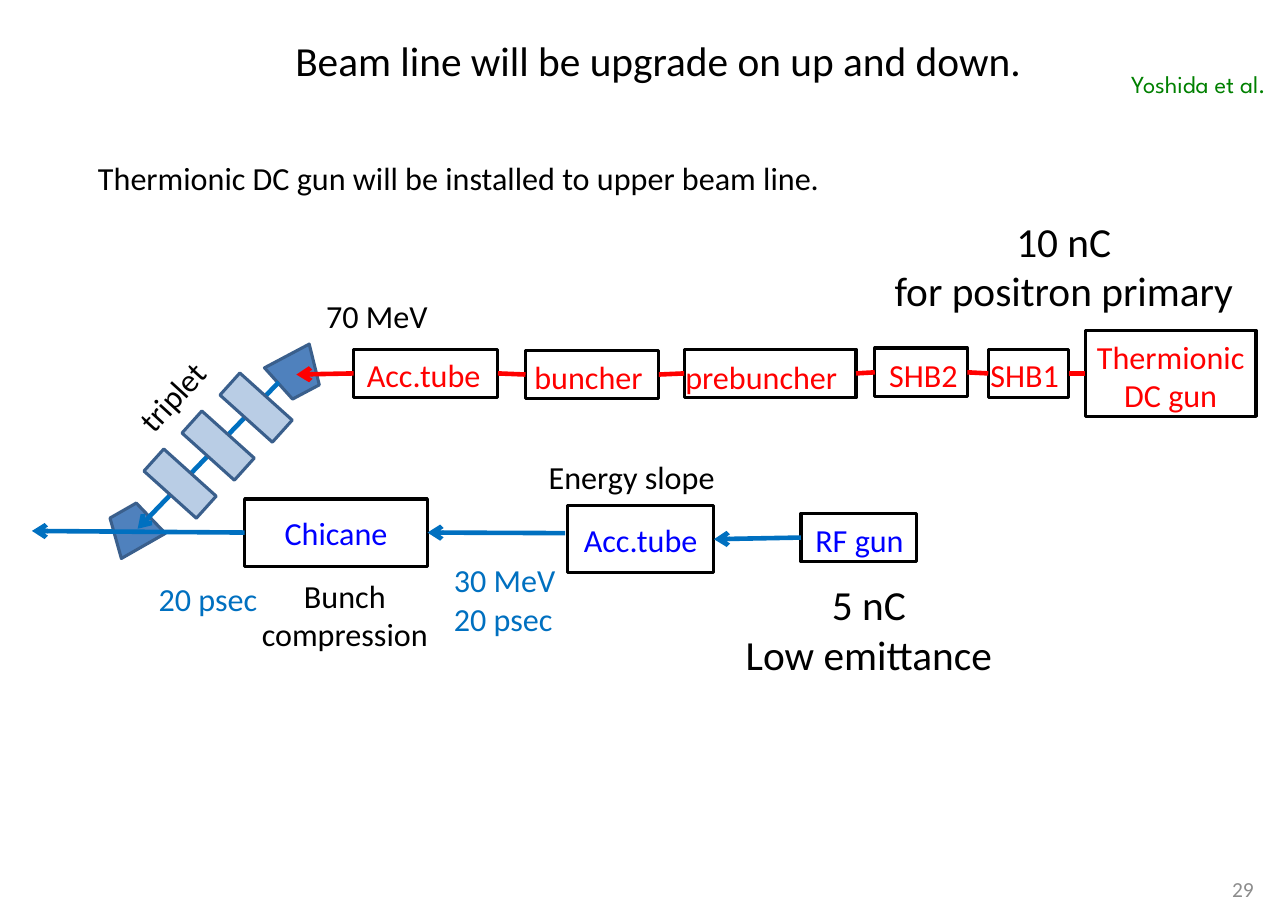
import pptx
import pptx.util
import pptx.dml.color
import pptx.enum.shapes
import pptx.enum.text
import pptx.oxml
import pptx.oxml.ns

Inches = pptx.util.Inches
Pt = pptx.util.Pt
SHAPE = pptx.enum.shapes.MSO_SHAPE
ALIGN = pptx.enum.text.PP_ALIGN
MIDDLE = pptx.enum.text.MSO_ANCHOR.MIDDLE
FIT = pptx.enum.text.MSO_AUTO_SIZE
LEFT, RIGHT = 1, 3

THEME = {
    "black": "000000", "white": "FFFFFF", "red": "FF0000", "blue": "0000FF",
    "beam": "0070C0", "green": "008000", "gray": "8C8C8C",
    "bend": "4F81BD", "magnet": "B9CDE5", "edge": "3A5F8C",
    "font": "Calibri", "credit": "League Spartan",
    "big": 27, "body": 21, "small": 16, "page": 14,
    "frame": 2, "link": 3,
}

FRAMES = {
    "acc": (3.21, 3.17, 1.31, 0.44),
    "bunch": (4.77, 3.18, 1.21, 0.44),
    "pre": (6.21, 3.17, 1.56, 0.44),
    "shb2": (7.94, 3.16, 0.84, 0.44),
    "shb1": (8.97, 3.17, 0.73, 0.44),
    "gun": (9.85, 3, 1.55, 0.78),
    "chicane": (2.22, 4.53, 1.66, 0.61),
    "tube": (5.15, 4.59, 1.33, 0.61),
    "rf": (7.27, 4.66, 1.05, 0.44),
}
FILLED = {"chicane": "Chicane", "tube": "Acc.tube"}
UPPER = ["gun", "shb1", "shb2", "pre", "bunch", "acc"]

ARROWS = [
    ("acc", (2.69, 3.4), "red"),
    ("rf", "tube", "beam"),
    ((5.13, 4.84), "chicane", "beam"),
    ("chicane", (0.29, 4.82), "beam"),
    ((2.53, 3.47), (1.25, 4.8), "beam"),
]
BENDS = [(2.46, 3.21, 152.1), (0.98, 4.61, 330.3)]
TRIPLET = [(2.19 - 0.345 * i, 3.38 + 0.345 * i) for i in range(3)]

LABELS = [
    ("Thermionic DC gun", (9.75, 3, 1.75, 0.82), "red", "body", "CENTER"),
    ("SHB1", (8.88, 3.17, 1.01, 0.47), "red", "body", "LEFT"),
    ("SHB2", (7.96, 3.17, 1.01, 0.47), "red", "body", "LEFT"),
    ("prebuncher", (6.11, 3.18, 1.89, 0.47), "red", "body", "LEFT"),
    ("buncher", (4.74, 3.18, 1.43, 0.47), "red", "body", "LEFT"),
    ("Acc.tube", (3.22, 3.17, 1.47, 0.47), "red", "body", "LEFT"),
    ("RF gun", (7.29, 4.66, 1.29, 0.47), "blue", "body", "LEFT"),
    ("Energy slope", (4.87, 4.09, 1.8, 0.47), "black", "body", "LEFT"),
    ("30 MeV\n20 psec", (4.01, 5.03, 1.29, 0.82), "beam", "body", "LEFT"),
    ("Bunch compression", (2.21, 5.17, 1.84, 0.82), "black", "body", "CENTER"),
    ("5 nC\nLow emittance", (6.54, 5.2, 2.69, 1.02), "black", "big", "CENTER"),
    ("10 nC\nfor positron primary", (7.81, 1.9, 3.69, 1.02), "black", "big", "CENTER"),
    ("Thermionic DC gun will be installed to upper beam line.",
     (0.78, 1.38, 10.4, 0.47), "black", "body", "LEFT"),
    ("70 MeV", (2.85, 2.63, 1.36, 0.47), "black", "body", "LEFT"),
]
LOOSE = [
    ("20 psec", (1.33, 5.2, 1.14, 0.47), "beam", "body", "LEFT"),
    ("Beam line will be upgrade on up and down.",
     (2.57, 0.26, 6.89, 0.57), "black", "big", "LEFT"),
]
TILTED = ("triplet", (1.03, 3.24, 1.28, 0.47), "black", "body", "LEFT")
CREDIT = ("Yoshida et al.", (9.96, 0.57, 1.64, 0.37), "green", "small", "RIGHT")
PAGE = ("29", (10.81, 7.93, 0.68, 0.28), "gray", "page", "RIGHT")

deck = pptx.Presentation()
deck.slide_width, deck.slide_height = Inches(11.69), Inches(8.27)
slide = deck.slides.add_slide(deck.slide_layouts[6])


def tint(name):
    return pptx.dml.color.RGBColor.from_string(THEME[name])


def write(shape, text, color, size, align, font="font"):
    frame = shape.text_frame
    frame.margin_left = frame.margin_right = Inches(0.11)
    frame.margin_top = frame.margin_bottom = Inches(0.06)
    frame.text = text
    for line in frame.paragraphs:
        line.alignment = ALIGN[align]
        line.font.name = THEME[font]
        line.font.size = Pt(THEME[size])
        line.font.color.rgb = tint(color)
    return frame


def label(text, place, color, size, align, wrap=True, fit=True, font="font"):
    box = slide.shapes.add_textbox(*map(Inches, place))
    frame = write(box, text, color, size, align, font)
    frame.word_wrap = wrap
    frame.auto_size = FIT.SHAPE_TO_FIT_TEXT if fit else FIT.NONE
    return box


def block(kind, place, fill, edge, turn=0):
    shape = slide.shapes.add_shape(kind, *map(Inches, place))
    shape.shadow.inherit = False
    shape.rotation = turn
    if fill:
        shape.fill.solid()
        shape.fill.fore_color.rgb = tint(fill)
    else:
        shape.fill.background()
    shape.line.color.rgb = tint(edge)
    shape.line.width = Pt(THEME["frame"])
    return shape


def point(end):
    return (0, 0) if end in boxes else tuple(map(Inches, end))


def link(start, stop, color, arrow=False):
    line = slide.shapes.add_connector(
        pptx.enum.shapes.MSO_CONNECTOR.STRAIGHT, *point(start), *point(stop))
    if start in boxes:
        line.begin_connect(boxes[start], LEFT)
    if stop in boxes:
        line.end_connect(boxes[stop], RIGHT)
    line.line.color.rgb = tint(color)
    line.line.width = Pt(THEME["link"])
    if arrow:
        tail = pptx.oxml.parse_xml(
            f'<a:tailEnd {pptx.oxml.ns.nsdecls("a")} type="arrow"/>')
        line.line._get_or_add_ln().append(tail)
    line._element.spPr.append(
        pptx.oxml.parse_xml(f'<a:effectLst {pptx.oxml.ns.nsdecls("a")}/>'))


for left, top, turn in BENDS:
    block(SHAPE.TRAPEZOID, (left, top, 0.46, 0.37), "bend", "edge", turn)

boxes = {}
for name, place in FRAMES.items():
    fill = "white" if name in FILLED else None
    boxes[name] = block(SHAPE.RECTANGLE, place, fill, "black")
    if name in FILLED:
        frame = write(boxes[name], FILLED[name], "blue", "body", "CENTER")
        frame.vertical_anchor = MIDDLE

for start, stop in zip(UPPER, UPPER[1:]):
    link(start, stop, "red")
for start, stop, color in ARROWS:
    link(start, stop, color, arrow=True)

for left, top in TRIPLET:
    block(SHAPE.RECTANGLE, (left, top, 0.27, 0.64), "magnet", "edge", 312)

for item in LABELS:
    label(*item)
for item in LOOSE:
    label(*item, wrap=False)
label(*TILTED).rotation = 312.5
label(*CREDIT, wrap=False, font="credit")
label(*PAGE, fit=False).text_frame.vertical_anchor = MIDDLE

deck.save("out.pptx")
